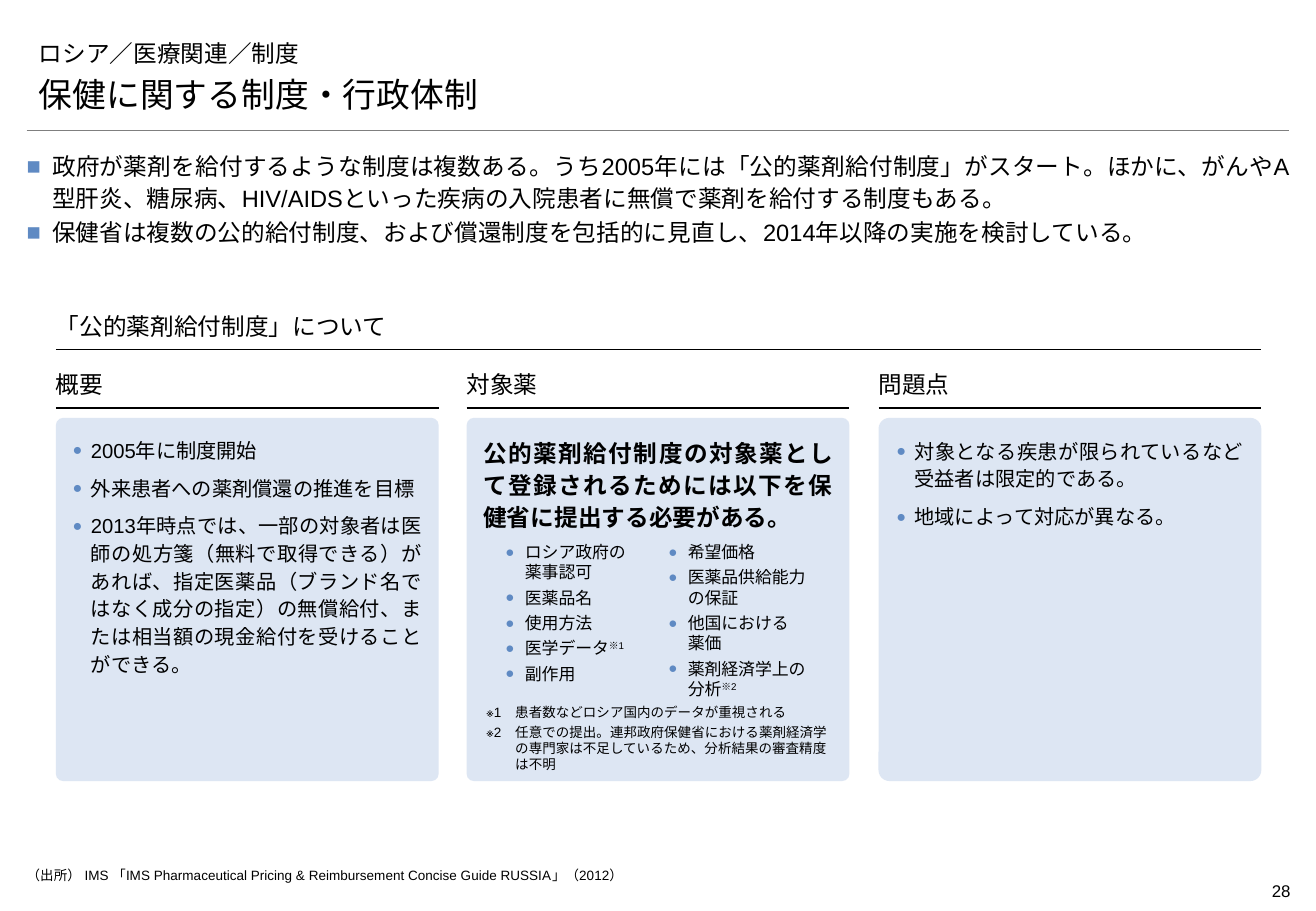
from dataclasses import dataclass

import pptx
import pptx.dml.color
import pptx.enum.shapes
import pptx.enum.text
import pptx.oxml.ns
import pptx.util
from lxml import etree

PX = 9144
BLACK = pptx.dml.color.RGBColor(0x00, 0x00, 0x00)
GREY = pptx.dml.color.RGBColor(0x7F, 0x7F, 0x7F)
BLUE = pptx.dml.color.RGBColor(0x5F, 0x8A, 0xC3)
PALE_BLUE = pptx.dml.color.RGBColor(0xDD, 0xE6, 0xF3)

ALIGN = pptx.enum.text.PP_ALIGN
ANCHOR = pptx.enum.text.MSO_ANCHOR
EAST_ASIAN_FONT = "Montserrat"


@dataclass(frozen=True)
class Style:
    size: int
    font: str = "Arial"
    bold: bool = False
    align: ALIGN = ALIGN.LEFT
    indent: int = 0
    line_spacing: float = 1.0
    space_after: int = 0
    bullet: str = ""
    bullet_percent: int = 100


@dataclass(frozen=True)
class Line:
    text: str
    superscript: str = ""


@dataclass(frozen=True)
class Card:
    heading: str
    style: Style
    lines: tuple[Line, ...]
    corner: float


@dataclass(frozen=True)
class Label:
    area: tuple[int, int, int, int]
    style: Style
    lines: tuple[Line, ...]
    insets: tuple[int, int, int, int] = (0, 0, 0, 0)
    anchor: ANCHOR = ANCHOR.TOP
    columns: int = 1


TITLE_INSETS = (10, 5, 10, 5)
HEADING_INSETS = (0, 5, 0, 8)
CARD_INSETS = (12, 12, 12, 0)
HEADING = Style(14, "Montserrat")
POINT = Style(12, align=ALIGN.JUSTIFY, indent=15, line_spacing=1.14,
              space_after=6, bullet="●", bullet_percent=80)
ISSUE = Style(12, "Noto Sans CJK JP", align=ALIGN.JUSTIFY, indent=15,
              line_spacing=1.14, space_after=6, bullet="●", bullet_percent=80)
REQUIREMENT = Style(14, "Noto Sans CJK JP", bold=True, align=ALIGN.JUSTIFY,
                    line_spacing=1.14, space_after=6)
SUMMARY = Style(14, align=ALIGN.JUSTIFY, indent=21, line_spacing=1.1,
                space_after=2, bullet="■")
DOCUMENT = Style(10, indent=16, space_after=3, bullet="●", bullet_percent=90)
NOTE = Style(8, indent=24, space_after=2)

LABELS = (
    Label((983, 720, 79, 27), Style(10, align=ALIGN.RIGHT), (Line("28"),), (0, 5, 0, 5)),
    Label((22, 21, 1039, 39), HEADING, (Line("ロシア／医療関連／制度"),),
          TITLE_INSETS, ANCHOR.BOTTOM),
    Label((22, 60, 1040, 39), Style(20, "Montserrat"), (Line("保健に関する制度・行政体制"),),
          TITLE_INSETS, ANCHOR.BOTTOM),
    Label((22, 123, 1039, 81), SUMMARY, (
        Line("政府が薬剤を給付するような制度は複数ある。うち2005年には「公的薬剤給付制度」がスタート。"
             "ほかに、がんやA型肝炎、糖尿病、HIV/AIDSといった疾病の入院患者に無償で薬剤を給付する制度もある。"),
        Line("保健省は複数の公的給付制度、および償還制度を包括的に見直し、2014年以降の実施を検討している。"),
    )),
    Label((22, 714, 1000, 16), Style(8), (
        Line("（出所） IMS 「IMS Pharmaceutical Pricing & Reimbursement Concise Guide RUSSIA」（2012）"),
    )),
)

CARDS = (
    Card("概要", POINT, (
        Line("2005年に制度開始"),
        Line("外来患者への薬剤償還の推進を目標"),
        Line("2013年時点では、一部の対象者は医師の処方箋（無料で取得できる）があれば、指定医薬品"
             "（ブランド名ではなく成分の指定）の無償給付、または相当額の現金給付を受けることができる。"),
    ), 0.02),
    Card("対象薬", REQUIREMENT, (
        Line("公的薬剤給付制度の対象薬として登録されるためには以下を保健省に提出する必要がある。"),
    ), 0.02),
    Card("問題点", ISSUE, (
        Line("対象となる疾患が限られているなど受益者は限定的である。"),
        Line("地域によって対応が異なる。"),
    ), 0.03),
)

CARD_DETAILS = (
    Label((416, 446, 252, 134), DOCUMENT, (
        Line("ロシア政府の\n薬事認可"),
        Line("医薬品名"),
        Line("使用方法"),
        Line("医学データ", "※1"),
        Line("副作用"),
        Line("希望価格"),
        Line("医薬品供給能力の保証"),
        Line("他国における\n薬価"),
        Line("薬剤経済学上の分析", "※2"),
    ), columns=2),
    Label((400, 580, 291, 43), NOTE, (
        Line("※1\t患者数などロシア国内のデータが重視される"),
        Line("※2\t任意での提出。連邦政府保健省における薬剤経済学の専門家は不足しているため、"
             "分析結果の審査精度は不明"),
    )),
)


def px(length: int) -> pptx.util.Emu:
    return pptx.util.Emu(length * PX)


def add_element(parent, tag: str, **attributes: str):
    element = etree.SubElement(parent, pptx.oxml.ns.qn(tag))
    for name, value in attributes.items():
        element.set(name, value)
    return element


def add_span(para, text: str, style: Style, raised: bool = False) -> None:
    span = para.add_run()
    span.text = text
    span.font.size = pptx.util.Pt(style.size)
    span.font.name = style.font
    span.font.bold = style.bold
    span.font.color.rgb = BLACK
    properties = span._r.get_or_add_rPr()
    properties.set("lang", "ja-JP")
    add_element(properties, "a:ea", typeface=EAST_ASIAN_FONT)
    if raised:
        properties.set("baseline", "30000")


def format_para(para, style: Style) -> None:
    properties = para._p.get_or_add_pPr()
    if style.indent:
        properties.set("marL", str(px(style.indent)))
        properties.set("indent", str(px(-style.indent)))
    if style.bullet:
        colour = add_element(properties, "a:buClr")
        add_element(colour, "a:srgbClr", val=str(BLUE))
        add_element(properties, "a:buSzPct", val=str(style.bullet_percent * 1000))
        add_element(properties, "a:buFont", typeface="Arial")
        add_element(properties, "a:buChar", char=style.bullet)
    para.alignment = style.align
    para.line_spacing = style.line_spacing
    para.space_after = pptx.util.Pt(style.space_after)


def fill_text(frame, lines: tuple[Line, ...], style: Style,
              insets: tuple[int, int, int, int], anchor: ANCHOR) -> None:
    frame.word_wrap = True
    frame.vertical_anchor = anchor
    (frame.margin_left, frame.margin_top,
     frame.margin_right, frame.margin_bottom) = map(px, insets)
    for index, line in enumerate(lines):
        para = frame.add_paragraph() if index else frame.paragraphs[0]
        format_para(para, style)
        for part, text in enumerate(line.text.split("\n")):
            if part:
                para.add_line_break()
            add_span(para, text, style)
        if line.superscript:
            add_span(para, line.superscript, style, raised=True)


def add_label(page, label: Label) -> None:
    box = page.shapes.add_textbox(*map(px, label.area))
    fill_text(box.text_frame, label.lines, label.style, label.insets, label.anchor)
    if label.columns > 1:
        body = box.text_frame._txBody.bodyPr
        body.set("numCol", str(label.columns))
        body.set("spcCol", str(px(16)))


def add_rule(page, left: int, top: int, width: int, colour, weight: float) -> None:
    rule = page.shapes.add_connector(pptx.enum.shapes.MSO_CONNECTOR.STRAIGHT,
                                     px(left), px(top), px(left + width), px(top))
    rule.line.color.rgb = colour
    rule.line.width = pptx.util.Pt(weight)
    add_element(rule._element.spPr, "a:effectLst")


def add_heading(page, text: str, left: int, rule_top: int, width: int) -> None:
    add_rule(page, left, rule_top, width, BLACK, 0.75)
    add_label(page, Label((left, rule_top - 31, width, 31), HEADING, (Line(text),),
                          HEADING_INSETS, ANCHOR.BOTTOM))


def add_card(page, card: Card, left: int) -> None:
    add_heading(page, card.heading, left, 336, 315)
    panel = page.shapes.add_shape(pptx.enum.shapes.MSO_SHAPE.ROUNDED_RECTANGLE,
                                  px(left), px(344), px(315), px(299))
    panel.adjustments[0] = card.corner
    panel.shadow.inherit = False
    panel.fill.solid()
    panel.fill.fore_color.rgb = PALE_BLUE
    panel.line.fill.background()
    fill_text(panel.text_frame, card.lines, card.style, CARD_INSETS, ANCHOR.TOP)


def main() -> None:
    deck = pptx.Presentation()
    deck.slide_width, deck.slide_height = px(1083), px(750)
    page = deck.slides.add_slide(deck.slide_layouts[6])
    add_rule(page, 22, 107, 1039, GREY, 0.25)
    for label in LABELS:
        add_label(page, label)
    add_heading(page, "「公的薬剤給付制度」について", 46, 288, 992)
    for index, card in enumerate(CARDS):
        add_card(page, card, 46 + index * 677 // 2)
    for label in CARD_DETAILS:
        add_label(page, label)
    deck.save("out.pptx")


if __name__ == "__main__":
    main()
